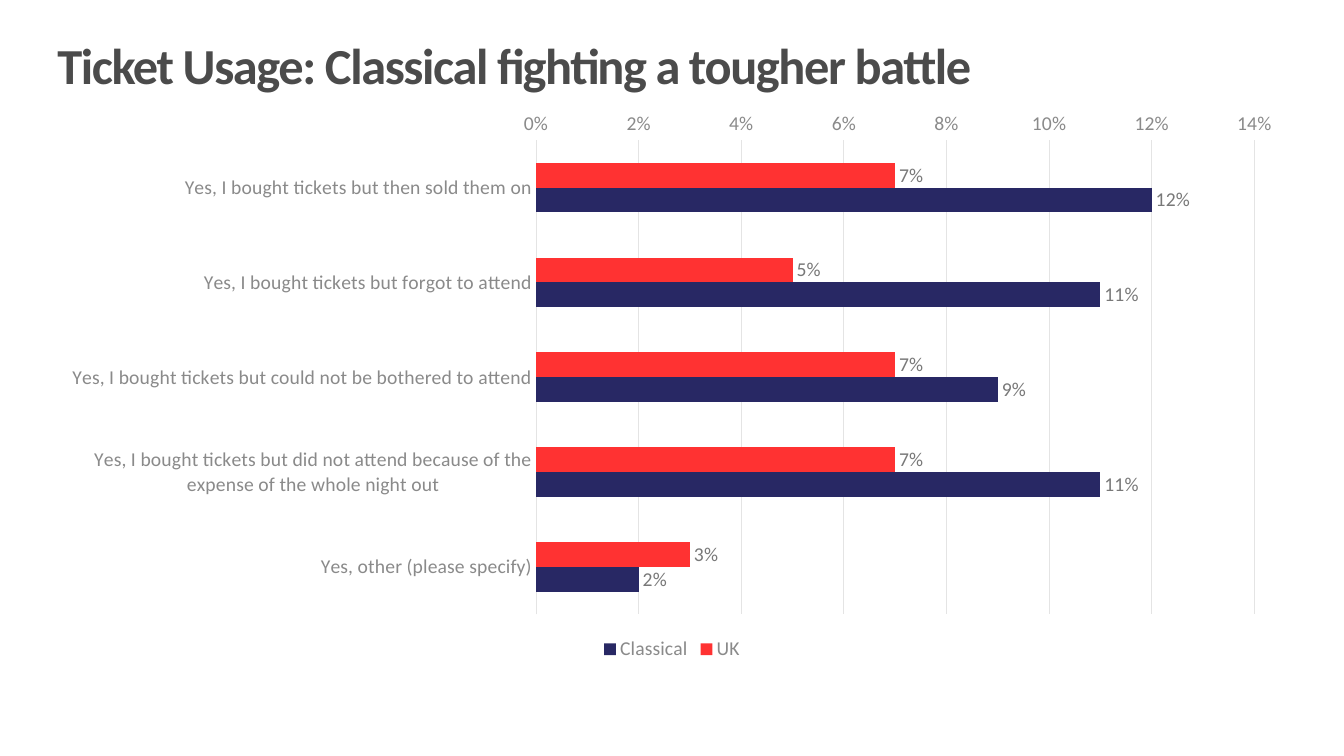
import pptx
import pptx.chart.data
import pptx.dml.color
import pptx.enum.chart
import pptx.enum.text
import pptx.util

FONT = "Calibri"
WIDTH, HEIGHT = 13.33, 7.5
COLORS = {"title": "4B4B4B", "axis": "8A8A8A", "label": "787878", "grid": "E4E4E4"}

CATEGORIES = [
    "Yes, I bought tickets but then sold them on",
    "Yes, I bought tickets but forgot to attend",
    "Yes, I bought tickets but could not be bothered to attend",
    "Yes, I bought tickets but did not attend because of the expense of the whole night out",
    "Yes, other (please specify)",
]
SERIES = {
    "UK": ("FF3232", [0.07, 0.05, 0.07, 0.07, 0.03]),
    "Classical": ("282864", [0.12, 0.11, 0.09, 0.11, 0.02]),
}


def rgb(value):
    return pptx.dml.color.RGBColor.from_string(value)


def apply(target, **values):
    for name, value in values.items():
        setattr(target, name, value)


def style_font(font, size, color, bold=False):
    apply(font, name=FONT, size=pptx.util.Pt(size), bold=bold)
    font.color.rgb = rgb(color)


def style_line(line):
    line.color.rgb = rgb(COLORS["grid"])
    line.width = pptx.util.Pt(0.75)


def add_title(slide, box, text):
    shape = slide.shapes.add_textbox(*map(pptx.util.Inches, box))
    apply(shape.text_frame, word_wrap=True,
          auto_size=pptx.enum.text.MSO_AUTO_SIZE.SHAPE_TO_FIT_TEXT)
    run = shape.text_frame.paragraphs[0].add_run()
    run.text = text
    style_font(run.font, 36, COLORS["title"], bold=True)
    # Tighten the letter spacing by one point
    run.font._element.set("spc", "-100")


def style_axes(chart):
    none = pptx.enum.chart.XL_TICK_MARK.NONE
    for axis in (chart.category_axis, chart.value_axis):
        apply(axis, major_tick_mark=none, minor_tick_mark=none)
        style_font(axis.tick_labels.font, 14, COLORS["axis"])

    # First answer at the top, which also puts the scale on top
    apply(chart.category_axis, reverse_order=True, has_major_gridlines=False)
    style_line(chart.category_axis.format.line)

    apply(chart.value_axis, minimum_scale=0, maximum_scale=0.14, major_unit=0.02,
          has_major_gridlines=True)
    apply(chart.value_axis.tick_labels, number_format="0%", number_format_is_linked=False)
    chart.value_axis.format.line.fill.background()
    style_line(chart.value_axis.major_gridlines.format.line)


def add_usage_chart(slide, box):
    data = pptx.chart.data.CategoryChartData(number_format="0%")
    data.categories = CATEGORIES
    for name, (_, values) in SERIES.items():
        data.add_series(name, values)
    chart = slide.shapes.add_chart(
        pptx.enum.chart.XL_CHART_TYPE.BAR_CLUSTERED,
        *map(pptx.util.Inches, box), data).chart
    apply(chart, has_title=False, has_legend=True)
    style_font(chart.font, 14, COLORS["title"])
    style_axes(chart)

    # Bars and their value labels
    plot = chart.plots[0]
    apply(plot, gap_width=182, overlap=0, vary_by_categories=False)
    for series in plot.series:
        series.format.fill.solid()
        series.format.fill.fore_color.rgb = rgb(SERIES[series.name][0])
        apply(series.data_labels, show_value=True, number_format="0%",
              number_format_is_linked=False,
              position=pptx.enum.chart.XL_LABEL_POSITION.OUTSIDE_END)
        style_font(series.data_labels.font, 14, COLORS["label"])

    # Legend
    apply(chart.legend, position=pptx.enum.chart.XL_LEGEND_POSITION.BOTTOM,
          include_in_layout=False)
    style_font(chart.legend.font, 14, COLORS["axis"])


def main():
    presentation = pptx.Presentation()
    apply(presentation, slide_width=pptx.util.Inches(WIDTH),
          slide_height=pptx.util.Inches(HEIGHT))
    slide = presentation.slides.add_slide(presentation.slide_layouts[6])
    left, top, title_height = 0.47, 0.29, 0.71
    content_width = WIDTH - 2 * left
    add_title(slide, (left, top, content_width, title_height),
              "Ticket Usage: Classical fighting a tougher battle")
    add_usage_chart(slide, (left, top + title_height, content_width, 5.6))
    presentation.save("out.pptx")


if __name__ == "__main__":
    main()
